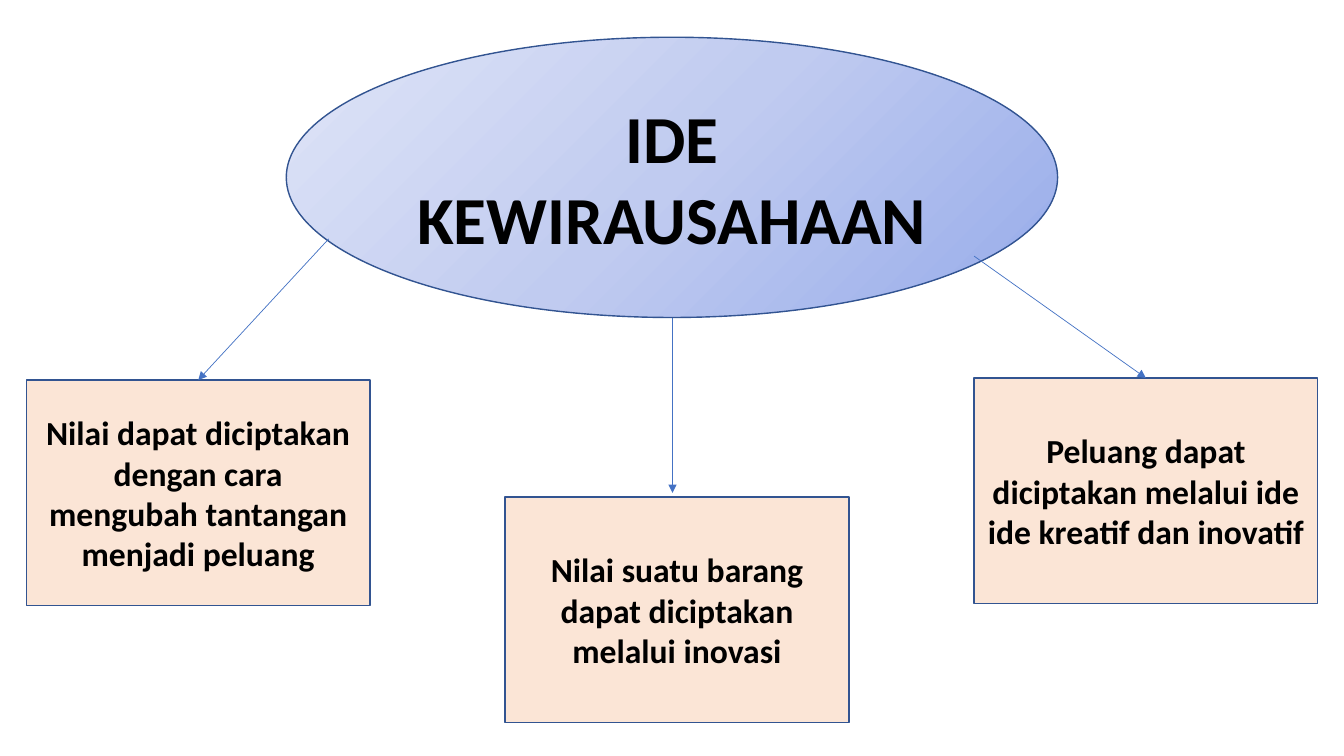
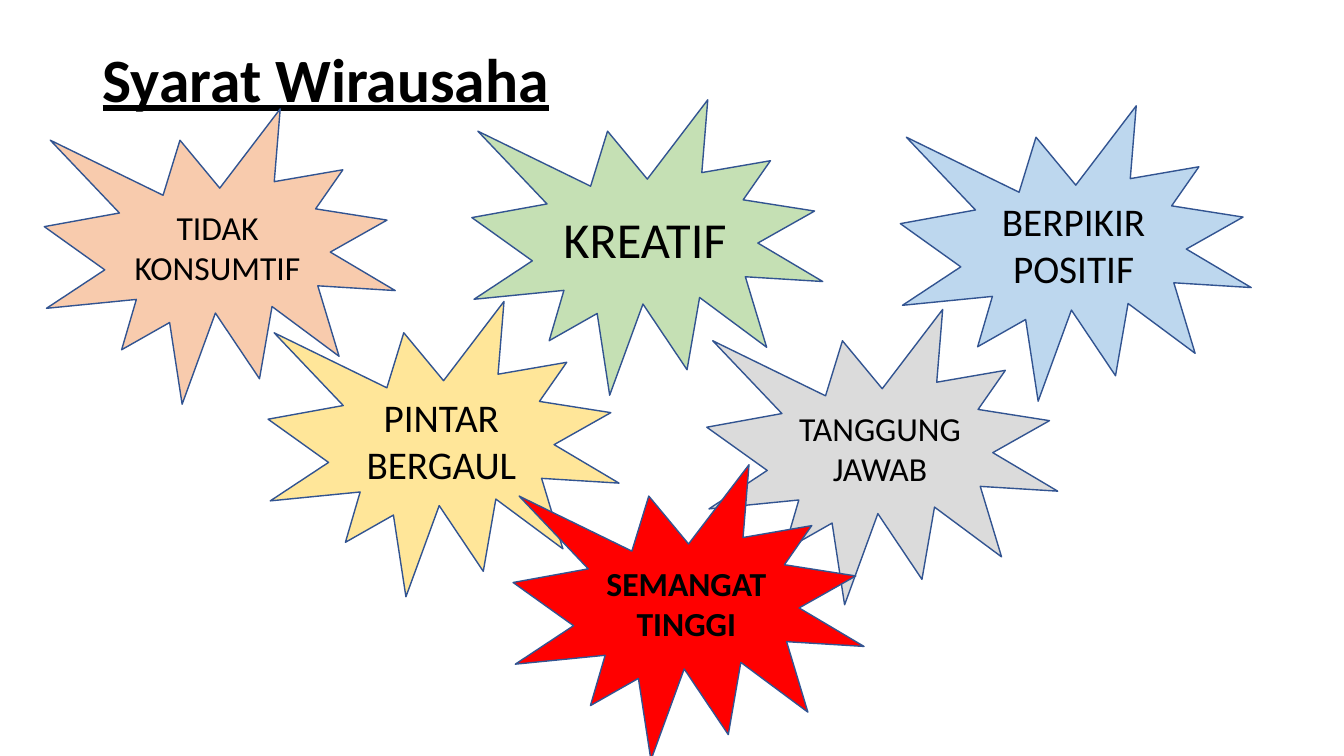
from dataclasses import dataclass

from lxml import etree
from pptx import Presentation
from pptx import util as u
from pptx.dml.color import RGBColor
from pptx.enum import shapes, text
from pptx.oxml import ns


@dataclass(frozen=True)
class Theme:
    """Colours, font and type sizes shared by the slides."""
    font: str = "Calibri"
    ink: str = "000000"
    outline: str = "325491"
    arrow: str = "4472C4"
    card: str = "FBE5D6"
    glow: tuple = ((0, "96ABEA"), (50, "C0CBF0"), (100, "E0E5F7"))
    peach: str = "F8CBAD"
    green: str = "C5E0B4"
    blue: str = "BDD7EE"
    yellow: str = "FFE699"
    grey: str = "DBDBDB"
    red: str = "FF0000"
    hero: int = 48
    title: int = 44
    large: int = 36
    medium: int = 28
    body: int = 24


@dataclass(frozen=True)
class Box:
    """A region whose areas are given in percent of its width and height."""
    left: int
    top: int
    width: int
    height: int

    def point(self, x, y):
        """Return the position at x and y percent."""
        return (round(self.left + self.width * x / 100),
                round(self.top + self.height * y / 100))

    def area(self, x, y, width, height):
        """Return the smaller box at x and y percent."""
        return Box(*self.point(x, y), round(self.width * width / 100),
                   round(self.height * height / 100))

    def edges(self):
        """Return left, top, width and height."""
        return self.left, self.top, self.width, self.height


THEME = Theme()
MSO = shapes.MSO_SHAPE
CARD_SIZE = (25.58, 29.87)
SEAL_SIZE = (26.11, 39.07)
IDEAS = [
    ("Nilai dapat diciptakan dengan cara mengubah tantangan menjadi peluang",
     (1.95, 50.27), (24.46, 31.6), (14.75, 50.27)),
    ("Nilai suatu barang dapat diciptakan melalui inovasi",
     (37.58, 65.73), (50.04, 42), (50.04, 65.2)),
    ("Peluang dapat diciptakan melalui ide ide kreatif dan inovatif",
     (72.47, 50), (72.47, 33.87), (85.26, 50)),
]
TRAITS = [
    ("TIDAK KONSUMTIF", (3.3, 14.4), THEME.peach, THEME.body, False),
    ("KREATIF", (35.11, 13.2), THEME.green, THEME.large, False),
    ("BERPIKIR POSITIF", (66.99, 14), THEME.blue, THEME.medium, False),
    ("PINTAR BERGAUL", (19.95, 39.87), THEME.yellow, THEME.medium, False),
    ("TANGGUNG JAWAB", (52.59, 40.93), THEME.grey, THEME.body, False),
    ("SEMANGAT TINGGI", (38.18, 61.47), THEME.red, THEME.body, True),
]


def write(shape, words, size, bold, align):
    """Put one vertically centred paragraph in a shape and return it."""
    frame = shape.text_frame
    frame.text = words
    frame.word_wrap = True
    frame.vertical_anchor = text.MSO_ANCHOR.MIDDLE
    para = frame.paragraphs[0]
    para.alignment = align
    font = para.runs[0].font
    font.name, font.size, font.bold = THEME.font, u.Pt(size), bold
    font.color.rgb = RGBColor.from_string(THEME.ink)
    return para


def add_label(page, kind, box, words, color, size, bold):
    """Add an outlined, filled shape with centred text."""
    shape = page.shapes.add_shape(kind, *box.edges())
    shape.shadow.inherit = False
    shape.fill.solid()
    shape.fill.fore_color.rgb = RGBColor.from_string(color)
    shape.line.color.rgb = RGBColor.from_string(THEME.outline)
    shape.line.width = u.Pt(1)
    write(shape, words, size, bold, text.PP_ALIGN.CENTER)
    return shape


def add_glow(shape, stops):
    """Replace a solid fill by a radial one from the lower right corner."""
    glow = etree.Element(ns.qn("a:gradFill"), rotWithShape="1")
    stop_list = etree.SubElement(glow, ns.qn("a:gsLst"))
    for share, color in stops:
        stop = etree.SubElement(stop_list, ns.qn("a:gs"), pos=str(share * 1000))
        etree.SubElement(stop, ns.qn("a:srgbClr"), val=color)
    radial = etree.SubElement(glow, ns.qn("a:path"), attrib={"path": "circle"})
    etree.SubElement(radial, ns.qn("a:fillToRect"), l="100000", t="100000")
    properties = shape._element.spPr
    properties.replace(properties.find(ns.qn("a:solidFill")), glow)


def add_arrow(page, start, tip):
    """Add a thin arrow that points at the tip."""
    arrow = page.shapes.add_connector(shapes.MSO_CONNECTOR.STRAIGHT, *start, *tip)
    arrow.line.color.rgb = RGBColor.from_string(THEME.arrow)
    arrow.line.width = u.Pt(0.5)
    properties = arrow._element.spPr
    outline = properties.find(ns.qn("a:ln"))
    etree.SubElement(outline, ns.qn("a:tailEnd"), type="triangle")
    etree.SubElement(properties, ns.qn("a:effectLst"))


def add_title(page, box, words):
    """Add an underlined slide title."""
    shape = page.shapes.add_textbox(*box.edges())
    para = write(shape, words, THEME.title, True, text.PP_ALIGN.LEFT)
    para.line_spacing = 0.9
    para.runs[0].font.underline = True


def build_ideas(page, box):
    """Draw the central idea with arrows to its three cards."""
    hero = add_label(page, MSO.OVAL, box.area(21.3, 4.93, 57.39, 37.07),
                     "IDE KEWIRAUSAHAAN", THEME.card, THEME.hero, True)
    add_glow(hero, THEME.glow)
    for words, corner, start, tip in IDEAS:
        add_label(page, MSO.RECTANGLE, box.area(*corner, *CARD_SIZE),
                  words, THEME.card, THEME.body, True)
        add_arrow(page, box.point(*start), box.point(*tip))


def build_traits(page, box):
    """Draw the title and a burst for each trait."""
    add_title(page, box.area(6.9, 1.2, 86.27, 19.33), "Syarat Wirausaha")
    for words, corner, color, size, bold in TRAITS:
        add_label(page, MSO.EXPLOSION1, box.area(*corner, *SEAL_SIZE),
                  words, color, size, bold)


def main():
    """Build the deck and save it."""
    deck = Presentation()
    deck.slide_width, deck.slide_height = u.Inches(13.33), u.Inches(7.5)
    box = Box(0, 0, deck.slide_width, deck.slide_height)
    for build in (build_ideas, build_traits):
        build(deck.slides.add_slide(deck.slide_layouts[6]), box)
    deck.save("out.pptx")


if __name__ == "__main__":
    main()
